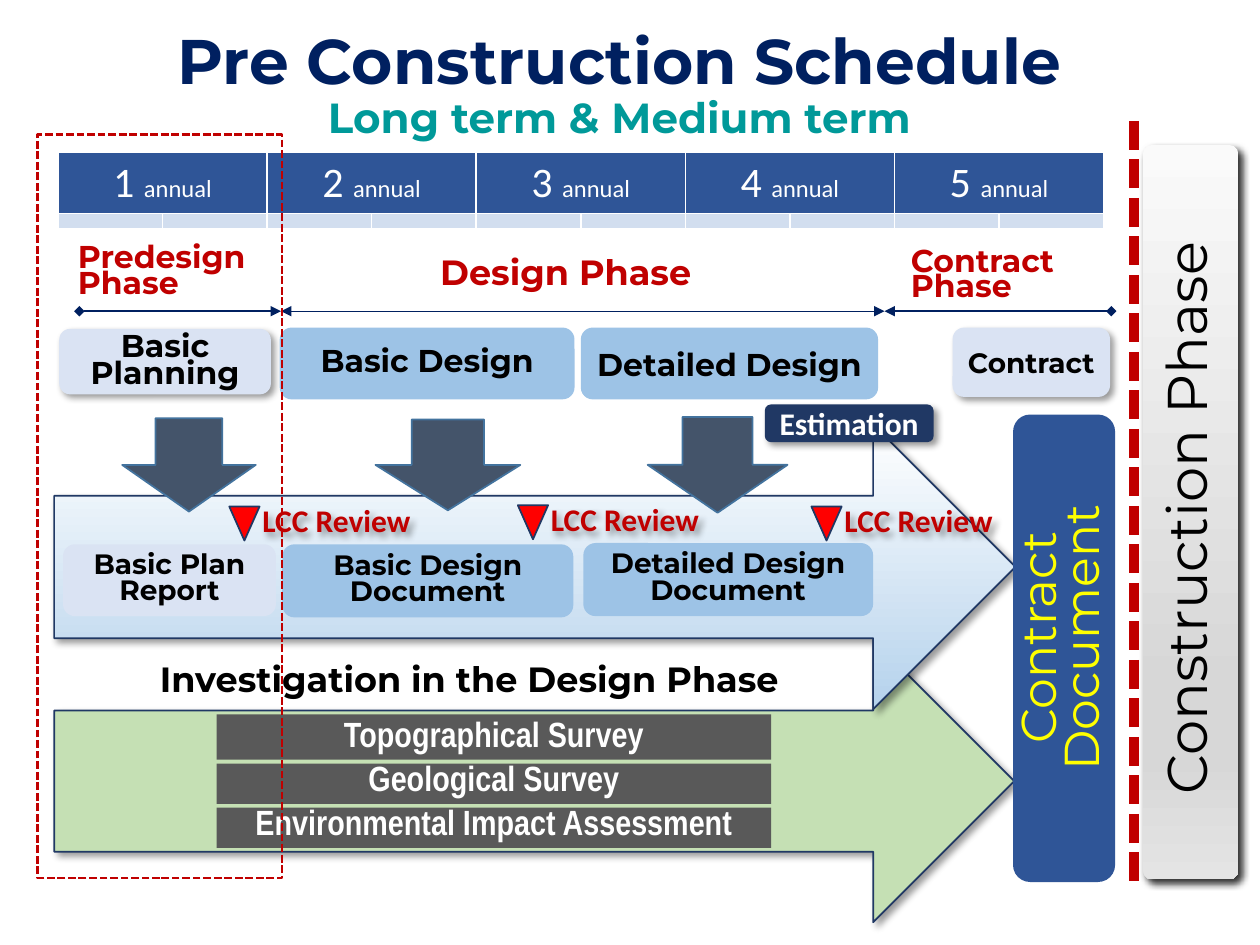
from lxml import etree
from pptx import Presentation
from pptx.dml.color import RGBColor
from pptx.enum.dml import MSO_LINE
from pptx.enum.shapes import MSO_CONNECTOR, MSO_SHAPE
from pptx.enum.text import MSO_ANCHOR, PP_ALIGN
from pptx.oxml import parse_xml
from pptx.oxml.ns import nsdecls, qn
from pptx.util import Inches, Pt

RECT, ROUND = MSO_SHAPE.RECTANGLE, MSO_SHAPE.ROUNDED_RECTANGLE
RIGHT_ARROW, DOWN_ARROW = MSO_SHAPE.RIGHT_ARROW, MSO_SHAPE.DOWN_ARROW
TRIANGLE = MSO_SHAPE.ISOSCELES_TRIANGLE
LEFT, CENTER = PP_ALIGN.LEFT, PP_ALIGN.CENTER
TOP, MIDDLE, BOTTOM = MSO_ANCHOR.TOP, MSO_ANCHOR.MIDDLE, MSO_ANCHOR.BOTTOM
DASH = MSO_LINE.SQUARE_DOT

COLORS = {
    "white": "FFFFFF", "black": "000000", "navy": "002060", "outline": "203864",
    "blue": "2F5597", "sky": "9DC3E6", "pale": "DAE3F3", "band": "D2DEEF",
    "green": "C5E0B4", "gray": "595959", "slate": "44546A", "slate_edge": "43739E",
    "crimson": "C00000", "red": "FF0000", "teal": "009999", "yellow": "FFFF00",
}
ARROW_GRADIENT = [(0, "FFFFFF"), (100, "B5D2EC")]
BAR_GRADIENT = [(0, "FAFAFA"), (74, "D7D7D7"), (83, "D7D7D7"), (100, "E4E4E4")]


def rgb(name):
    return RGBColor.from_string(COLORS[name])


def style_font(font, size, color, bold=True, face="Montserrat"):
    font.name, font.size, font.bold = face, Pt(size), bold
    font.color.rgb = rgb(color)


def write(shape, text, size, color, bold=True, face="Montserrat", align=CENTER,
          anchor=MIDDLE, spacing=None, insets=(0.1, 0.05, 0.1, 0.05), wrap=True):
    frame = shape.text_frame
    frame.word_wrap, frame.vertical_anchor = wrap, anchor
    (frame.margin_left, frame.margin_top,
     frame.margin_right, frame.margin_bottom) = map(Inches, insets)
    paragraph = frame.paragraphs[0]
    paragraph.text, paragraph.alignment = text, align
    if spacing:
        paragraph.line_spacing = spacing
    style_font(paragraph.font, size, color, bold, face)


def add_shadow(shape, alpha=40):
    shape._element.spPr.append(parse_xml(
        f'<a:effectLst {nsdecls("a")}><a:outerShdw blurRad="50800" dist="38100" '
        f'dir="2700000" algn="tl" rotWithShape="0"><a:srgbClr val="000000">'
        f'<a:alpha val="{alpha * 1000}"/></a:srgbClr></a:outerShdw></a:effectLst>'))


def fill_gradient(shape, stops):
    shape.fill.gradient()
    gradient = shape._element.spPr.find(qn("a:gradFill"))
    stop_xml = "".join(f'<a:gs pos="{pos * 1000}"><a:srgbClr val="{color}"/></a:gs>'
                       for pos, color in stops)
    gradient.getparent().replace(gradient, parse_xml(
        f'<a:gradFill {nsdecls("a")} rotWithShape="1"><a:gsLst>{stop_xml}</a:gsLst>'
        f'<a:lin ang="5400000" scaled="0"/></a:gradFill>'))


def add_block(slide, kind, box, fill=None, line=None, width=1, shadow=0):
    block = slide.shapes.add_shape(kind, *map(Inches, box))
    if isinstance(fill, list):
        fill_gradient(block, fill)
    elif fill:
        block.fill.solid()
        block.fill.fore_color.rgb = rgb(fill)
    else:
        block.fill.background()
    if line:
        block.line.color.rgb, block.line.width = rgb(line), Pt(width)
    else:
        block.line.fill.background()
    if shadow:
        add_shadow(block, shadow)
    else:
        block.shadow.inherit = False
    return block


def add_label(slide, box, text, size, color, rotation=0, **options):
    label = slide.shapes.add_textbox(*map(Inches, box))
    label.rotation = rotation
    write(label, text, size, color, **options)


def add_line(slide, start, end, color, width, head=None, tail=None):
    line = slide.shapes.add_connector(MSO_CONNECTOR.STRAIGHT, *map(Inches, start + end))
    line.line.color.rgb, line.line.width = rgb(color), Pt(width)
    outline = line.line._get_or_add_ln()
    for tag, kind in (("a:headEnd", head), ("a:tailEnd", tail)):
        if kind:
            etree.SubElement(outline, qn(tag), type=kind)
    etree.SubElement(line._element.spPr, qn("a:effectLst"))
    return line


def add_title(slide):
    title = slide.shapes.title
    title.left, title.top, title.width, title.height = map(Inches, (0.63, 0.19, 8.57, 0.99))
    write(title, "Pre Construction Schedule", 36, "navy", spacing=0.9)
    subtitle = title.text_frame.add_paragraph()
    subtitle.text, subtitle.alignment = "Long term & Medium term", CENTER
    subtitle.line_spacing = 0.9
    style_font(subtitle.font, 24, "teal")


def style_cell(cell, fill, bottom):
    properties = cell._tc.get_or_add_tcPr()
    for side, width in (("L", 1), ("R", 1), ("T", 1), ("B", bottom)):
        properties.append(parse_xml(
            f'<a:ln{side} {nsdecls("a")} w="{Pt(width)}"><a:solidFill>'
            f'<a:srgbClr val="{COLORS["white"]}"/></a:solidFill></a:ln{side}>'))
    cell.fill.solid()
    cell.fill.fore_color.rgb = rgb(fill)


def add_years(slide):
    years = slide.shapes.add_table(
        2, 10, *map(Inches, (0.46, 1.21, 8.31, 0.59))).table
    years.rows[0].height, years.rows[1].height = Inches(0.47), Inches(0.12)
    for column in range(10):
        years.columns[column].width = Inches(0.83)
        style_cell(years.cell(0, column), "blue", 1)
        half = years.cell(1, column)
        style_cell(half, "band", 1)
        half.margin_top = half.margin_bottom = 0
        half_paragraph = half.text_frame.paragraphs[0]._p
        etree.SubElement(half_paragraph, qn("a:endParaRPr"), sz="400")
    for year in range(5):
        heading = years.cell(0, 2 * year)
        heading.merge(years.cell(0, 2 * year + 1))
        heading.margin_left = heading.margin_right = Inches(0.07)
        heading.margin_top = heading.margin_bottom = Inches(0.04)
        paragraph = heading.text_frame.paragraphs[0]
        paragraph.alignment = CENTER
        for text, size in ((f"{year + 1} ", 24), ("annual", 14)):
            run = paragraph.add_run()
            run.text = text
            style_font(run.font, size, "white", False, "Calibri")


def add_investigation(slide):
    add_block(slide, RIGHT_ARROW, (0.43, 5.08, 7.62, 2.24), "green", "outline", shadow=40)
    for text, top, height in (("Topographical Survey", 5.67, 0.36),
                              ("Geological Survey", 6.06, 0.32),
                              ("Environmental Impact Assessment", 6.41, 0.32)):
        survey = add_block(slide, RECT, (1.72, top, 4.4, height), "gray")
        write(survey, text, 20, "white", face="Arial Narrow", anchor=BOTTOM,
              spacing=0.9, insets=(0, 0.04, 0, 0.04))


def add_steps(slide):
    tight = Pt(15)
    # text, box, fill, size, line spacing, top inset, bottom inset, shadow
    steps = (
        ("Basic Planning", (0.47, 2.61, 1.68, 0.52), "pale", 18, tight, 0.08, 0.04, 40),
        ("Basic Design", (2.22, 2.6, 2.34, 0.57), "sky", 18, tight, 0.04, 0, 0),
        ("Detailed Design", (4.61, 2.6, 2.36, 0.57), "sky", 18, None, 0.04, 0.04, 0),
        ("Contract", (7.56, 2.6, 1.25, 0.55), "pale", 16, None, 0.04, 0.04, 40),
        ("Basic Plan Report", (0.5, 4.32, 1.69, 0.57), "pale", 16, tight, 0.04, 0.04, 0),
        ("Basic Design Document", (2.24, 4.32, 2.31, 0.58), "sky", 16, tight, 0.04, 0.04, 0),
        ("Detailed Design Document", (4.63, 4.31, 2.3, 0.58), "sky", 16, tight, 0.04, 0.04, 0),
    )
    for text, box, fill, size, spacing, top, bottom, shadow in steps:
        step = add_block(slide, ROUND, box, fill, shadow=shadow)
        write(step, text, size, "black", spacing=spacing, insets=(0, top, 0, bottom))
    for box in ((0.97, 3.32, 1.06, 0.74), (2.98, 3.33, 1.15, 0.72), (5.14, 3.31, 1.11, 0.76)):
        add_block(slide, DOWN_ARROW, box, "slate", "slate_edge")


def add_review(slide, left, top):
    review = add_block(slide, ROUND, (left + 0.2, top, 1.3, 0.22), shadow=40)
    write(review, "LCC Review", 18, "crimson", face="Calibri", insets=(0, 0, 0, 0))
    marker = add_block(slide, TRIANGLE, (left, top, 0.24, 0.27), "red", "outline")
    marker.rotation = 180


def add_phases(slide):
    add_label(slide, (0.52, 1.92, 1.63, 0.52), "Predesign Phase", 18, "crimson",
              align=LEFT, anchor=TOP, spacing=Pt(15))
    add_label(slide, (3.1, 1.94, 2.78, 0.44), "Design Phase", 20, "crimson", anchor=TOP)
    add_label(slide, (7.15, 1.98, 1.53, 0.45), "Contract Phase", 18, "crimson",
              align=LEFT, anchor=TOP, spacing=Pt(14), insets=(0.08, 0.04, 0.08, 0))
    for start, end, width, head in ((0.63, 2.23, 1, "diamond"),
                                    (2.23, 7.02, 0.75, "triangle"),
                                    (8.82, 7.02, 1, "diamond")):
        add_line(slide, (start, 2.47), (end, 2.47), "navy", width, head, "triangle")


def add_construction(slide):
    divider = add_line(slide, (9, 0.96), (9, 7.07), "crimson", 5.5)
    divider.line.dash_style = DASH
    add_block(slide, ROUND, (9.07, 1.15, 0.76, 5.83), BAR_GRADIENT,
              shadow=80).adjustments[0] = 0.1
    add_label(slide, (6.78, 3.46, 5.25, 0.64), "Construction Phase", 32, "black",
              rotation=270, bold=False, align=LEFT)
    add_block(slide, ROUND, (8.04, 3.29, 0.81, 3.71), "blue")
    add_label(slide, (7.08, 4.66, 2.76, 0.8), "Contract Document", 28, "yellow",
              rotation=270, bold=False, spacing=Pt(25))


def main():
    prs = Presentation()
    prs.slide_width, prs.slide_height = Inches(10), Inches(7.5)
    slide = prs.slides.add_slide(prs.slide_layouts[5])
    add_title(slide)
    add_investigation(slide)
    # Document flow and timeline
    add_block(slide, RIGHT_ARROW, (0.43, 3.37, 7.63, 2.26), ARROW_GRADIENT, "outline", shadow=40)
    add_years(slide)
    estimation = add_block(slide, ROUND, (6.07, 3.21, 1.34, 0.3), "outline", shadow=40)
    write(estimation, "Estimation", 18, "white", face="Calibri", insets=(0.07, 0.04, 0.07, 0.04))
    add_phases(slide)
    add_steps(slide)
    add_construction(slide)
    for left, top in ((1.82, 4.02), (4.11, 4.01), (6.44, 4.02)):
        add_review(slide, left, top)
    add_label(slide, (1.17, 5.17, 5.61, 0.44), "Investigation in the Design Phase", 20,
              "black", align=LEFT, anchor=TOP, wrap=False)
    # Frame around the first year
    first_year = add_block(slide, RECT, (0.3, 1.07, 1.94, 5.9), None, "crimson", 1.5)
    first_year.line.dash_style = DASH
    prs.save("out.pptx")


if __name__ == "__main__":
    main()
